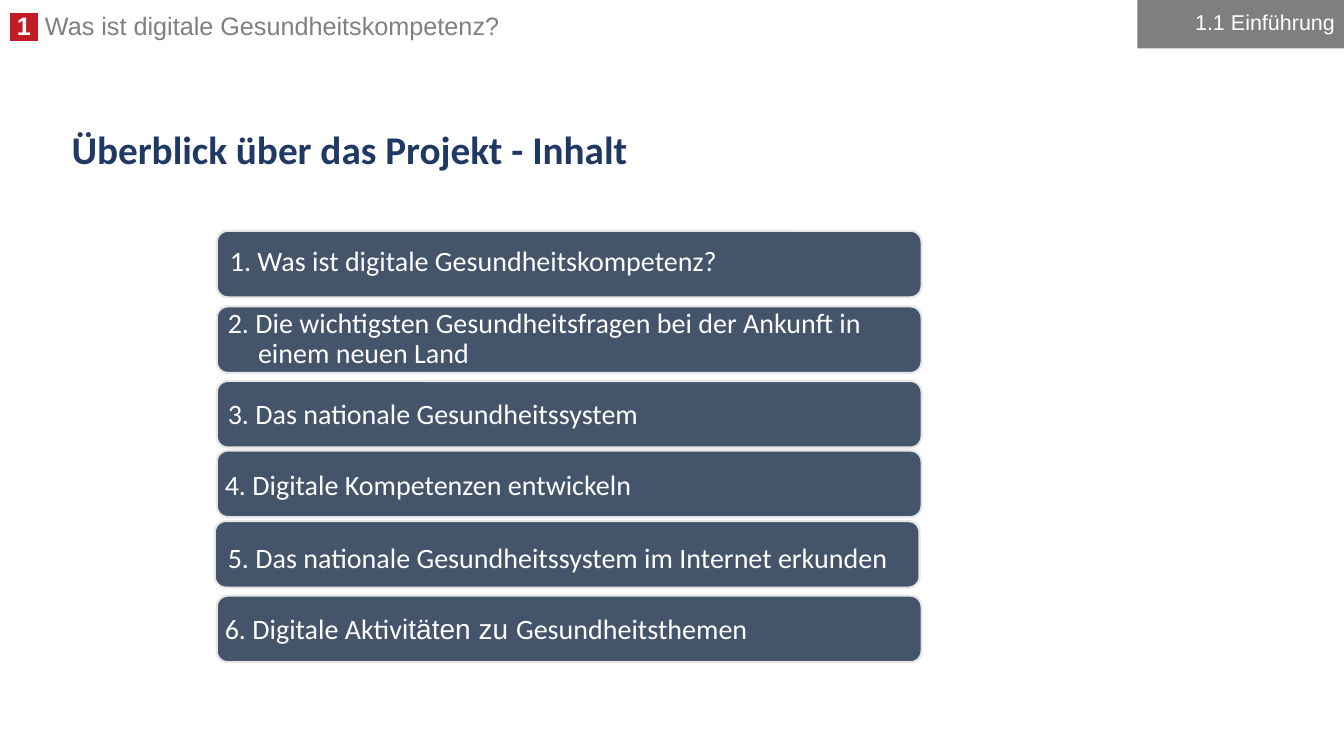
from dataclasses import dataclass

from lxml.etree import SubElement
from pptx import Presentation
from pptx.dml.color import RGBColor
from pptx.enum.shapes import MSO_SHAPE
from pptx.enum.text import MSO_ANCHOR, MSO_AUTO_SIZE, PP_ALIGN
from pptx.oxml.ns import qn
from pptx.util import Inches, Pt

WHITE, GREY, RED = "FFFFFF", "7F7F7F", "C01E24"
NAVY, SLATE, PALE = "203864", "44546A", "E7E6E6"


@dataclass
class Run:
    text: str
    size: float = 20
    font: str = "Calibri"
    color: str = WHITE
    bold: bool = False
    mark: str = ""


@dataclass
class Box:
    left: float
    top: float
    width: float
    height: float

    def place(self) -> tuple:
        return tuple(Inches(n) for n in (self.left, self.top, self.width, self.height))


@dataclass
class Item:
    bar: Box
    label: Box
    runs: list[Run]
    hang: float = 0


def paint(target, color: str) -> None:
    if hasattr(target, "solid"):
        target.solid()
        target = target.fore_color
    target.rgb = RGBColor.from_string(color)


def write(shape, runs: list[Run], space: float = 0.9, pad: tuple = (0.1, 0.05),
          anchor=MSO_ANCHOR.MIDDLE, align=PP_ALIGN.LEFT, hang: float = 0) -> None:
    frame = shape.text_frame
    frame.word_wrap = True
    frame.auto_size = MSO_AUTO_SIZE.NONE
    frame.vertical_anchor = anchor
    frame.margin_left = frame.margin_right = Inches(pad[0])
    frame.margin_top = frame.margin_bottom = Inches(pad[1])
    para = frame.paragraphs[0]
    para.alignment = align
    para.line_spacing = space
    if hang:
        props = para._p.get_or_add_pPr()
        props.set("marL", str(Inches(hang)))
        props.set("indent", str(-Inches(hang)))
    for part in runs:
        run = para.add_run()
        run.text = part.text
        font = run.font
        font.size = Pt(part.size)
        font.bold = part.bold
        paint(font.fill, part.color)
        if part.mark:
            props = run._r.get_or_add_rPr()
            mark = SubElement(props, qn("a:highlight"))
            SubElement(mark, qn("a:srgbClr"), val=part.mark)
        font.name = part.font


def block(slide, kind, box: Box, fill: str, line: str = ""):
    shape = slide.shapes.add_shape(kind, *box.place())
    shape.shadow.inherit = False
    paint(shape.fill, fill)
    if line:
        paint(shape.line.fill, line)
        shape.line.width = Pt(1.5)
    else:
        shape.line.fill.background()
    return shape


def entry(slide, item: Item) -> None:
    bar = block(slide, MSO_SHAPE.ROUNDED_RECTANGLE, item.bar, SLATE, PALE)
    bar.adjustments[0] = 0.167
    label = slide.shapes.add_textbox(*item.label.place())
    write(label, item.runs, pad=(0.08, 0.08), hang=item.hang)


def row(left: float, top: float, label: Box, *runs: Run, hang: float = 0) -> Item:
    return Item(Box(left, top, 6.99, 0.66), label, list(runs), hang)


ITEMS = [
    row(2.15, 2.29, Box(2.2, 2.38, 7.08, 0.44),
        Run("1. Was ist digitale Gesundheitskompetenz?"), hang=0.3),
    row(2.15, 3.04, Box(2.18, 3.07, 6.94, 0.6),
        Run("2. Die wichtigsten Gesundheitsfragen bei der Ankunft in einem neuen Land"),
        hang=0.3),
    row(2.15, 3.78, Box(2.18, 3.82, 6.94, 0.6),
        Run("3. Das nationale Gesundheitssystem")),
    row(2.15, 4.47, Box(2.15, 4.53, 6.94, 0.6),
        Run("4. Digitale Kompetenzen entwickeln")),
    row(2.13, 5.17, Box(2.18, 5.25, 6.94, 0.6),
        Run("5. Das nationale Gesundheitssystem im Internet erkunden")),
    row(2.15, 5.91, Box(2.15, 5.95, 6.94, 0.6),
        Run("6. Digitale Aktiv"), Run("itäten zu ", font="Arial"),
        Run("Gesundheitsthemen")),
]


def main() -> None:
    deck = Presentation()
    deck.slide_width, deck.slide_height = Inches(13.33), Inches(7.5)
    slide = deck.slides.add_slide(deck.slide_layouts[5])
    paint(slide.background.fill, WHITE)

    head = slide.shapes.add_textbox(*Box(0, 0.11, 9.52, 0.35).place())
    write(head, [
        Run(" 1 ", 18, "Arial", WHITE, True, RED),
        Run(" Was ist digitale Gesundheitskompetenz?", 18, "Arial", GREY),
    ], 0.8, anchor=MSO_ANCHOR.TOP)

    title = slide.shapes.title
    title.left, title.top, title.width, title.height = Box(0.61, 1.18, 12.1, 0.66).place()
    write(title, [Run("Überblick über das Projekt - Inhalt", 28, color=NAVY, bold=True)])

    for item in ITEMS:
        entry(slide, item)

    tag = block(slide, MSO_SHAPE.RECTANGLE, Box(11.28, 0, 2.06, 0.48), GREY)
    write(tag, [Run("1.1 Einführung", 15.3, "Arial")], 0.8, align=PP_ALIGN.RIGHT)

    deck.save("out.pptx")


if __name__ == "__main__":
    main()
